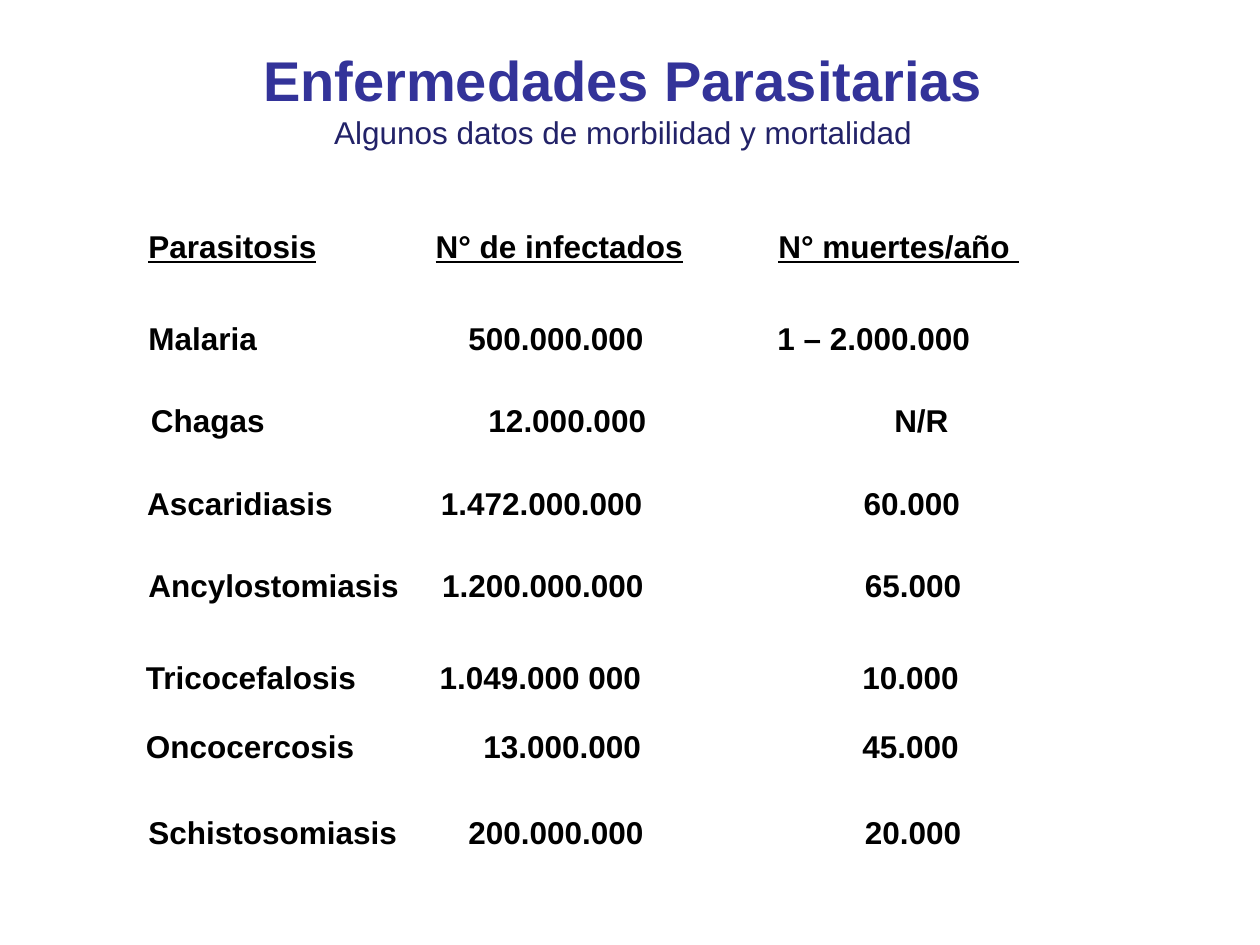
from dataclasses import dataclass

from lxml.etree import SubElement
from pptx import Presentation
from pptx.dml.color import RGBColor
from pptx.enum.shapes import MSO_SHAPE
from pptx.enum.text import MSO_ANCHOR, MSO_AUTO_SIZE, PP_ALIGN
from pptx.oxml.ns import qn
from pptx.util import Inches, Pt


@dataclass(frozen=True)
class Theme:
    font: str = "Arial"
    title: RGBColor = RGBColor(0x33, 0x33, 0x99)
    subtitle: RGBColor = RGBColor(0x22, 0x22, 0x68)
    text: RGBColor = RGBColor(0x00, 0x00, 0x00)
    background: RGBColor = RGBColor(0xFF, 0xFF, 0xFF)
    title_size: Pt = Pt(32)
    text_size: Pt = Pt(18)


theme = Theme()


def add_run(paragraph, text, size, color, bold=True, underline=False):
    run = paragraph.add_run()
    run.text = text
    run.font.name = theme.font
    run.font.size = size
    run.font.color.rgb = color
    run.font.bold = bold
    run.font.underline = underline


def set_tabs(paragraph, positions, alignment):
    """Set tab stops in inches from the text edge; alignment is "l" or "r"."""
    tab_list = SubElement(paragraph._p.get_or_add_pPr(), qn("a:tabLst"))
    for position in positions:
        SubElement(tab_list, qn("a:tab"), pos=str(Inches(position)), algn=alignment)


presentation = Presentation()
presentation.slide_width = Inches(10)
presentation.slide_height = Inches(7.5)
slide = presentation.slides.add_slide(presentation.slide_layouts[5])
slide.background.fill.solid()
slide.background.fill.fore_color.rgb = theme.background

# Rows: left, top, width, cells, tab stops, tab alignment
infected_tab, deaths_tab = 3.93, 6.45
number_tabs = (infected_tab, deaths_tab)
rows = [
    (1.08, 1.75, 8.22, ("Parasitosis", "N° de infectados", "N° muertes/año "), (2.28, 5), "l"),
    (1.08, 2.48, 7.74, ("Malaria", "500.000.000", "1 – 2.000.000"), (infected_tab, 6.52), "r"),
    (1.10, 3.13, 7.74, ("Chagas", "12.000.000", "N/R"), (infected_tab, 6.33), "r"),
    (1.07, 3.79, 7.77, ("Ascaridiasis", "1.472.000.000", "60.000"), number_tabs, "r"),
    (1.08, 4.44, 7.77, ("Ancylostomiasis", "1.200.000.000", "65.000"), number_tabs, "r"),
    (1.06, 5.17, 7.77, ("Tricocefalosis", "1.049.000 000", "10.000"), number_tabs, "r"),
    (1.06, 5.72, 7.77, ("Oncocercosis", "13.000.000", "45.000"), number_tabs, "r"),
    (1.08, 6.40, 7.77, ("Schistosomiasis", "200.000.000", "20.000"), number_tabs, "r"),
]

for row_index, (left, top, width, cells, tabs, tab_alignment) in enumerate(rows):
    shape = slide.shapes.add_shape(
        MSO_SHAPE.RECTANGLE, Inches(left), Inches(top), Inches(width), Inches(0.4)
    )
    shape.shadow.inherit = False
    shape.fill.solid()
    shape.fill.fore_color.rgb = theme.background
    shape.line.fill.background()
    frame = shape.text_frame
    frame.word_wrap = True
    frame.auto_size = MSO_AUTO_SIZE.SHAPE_TO_FIT_TEXT
    frame.vertical_anchor = MSO_ANCHOR.TOP
    paragraph = frame.paragraphs[0]
    paragraph.alignment = PP_ALIGN.LEFT
    set_tabs(paragraph, tabs, tab_alignment)
    for cell_index, cell in enumerate(cells):
        if cell_index:
            add_run(paragraph, "\t", theme.text_size, theme.text)
        add_run(paragraph, cell, theme.text_size, theme.text, underline=row_index == 0)

# Title and subtitle
title = slide.shapes.title
title.left, title.top = Inches(1.41), Inches(0.31)
title.width, title.height = Inches(7.07), Inches(0.94)
frame = title.text_frame
frame.word_wrap = True
frame.auto_size = MSO_AUTO_SIZE.SHAPE_TO_FIT_TEXT
frame.vertical_anchor = MSO_ANCHOR.TOP
heading = frame.paragraphs[0]
subtitle = frame.add_paragraph()
heading.alignment = subtitle.alignment = PP_ALIGN.CENTER
add_run(heading, "Enfermedades Parasitarias", theme.title_size, theme.title)
add_run(
    subtitle, "Algunos datos de morbilidad y mortalidad",
    theme.text_size, theme.subtitle, bold=False,
)

presentation.save("out.pptx")
